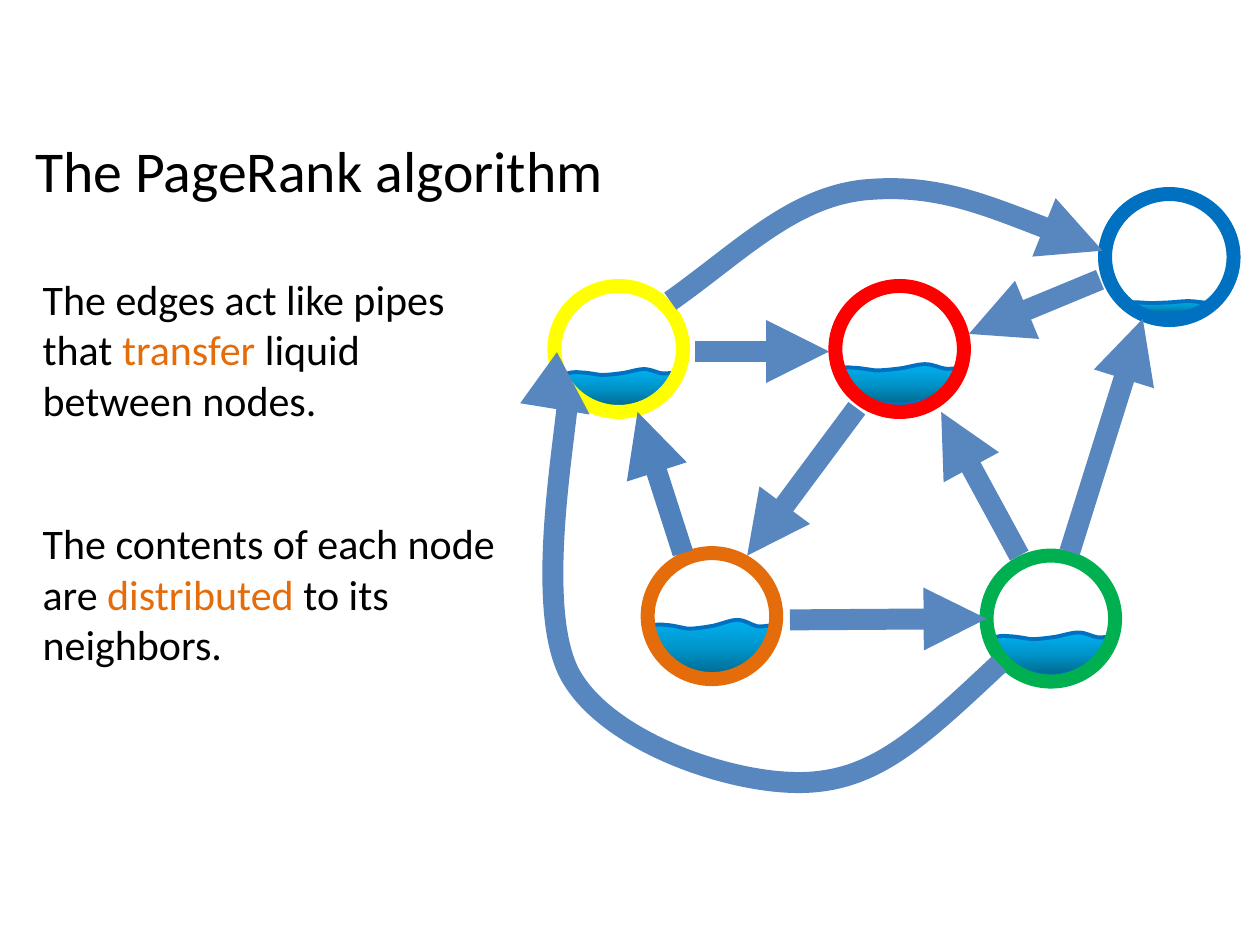
import copy

import pptx
import pptx.dml.color
import pptx.enum.shapes
import pptx.enum.text
import pptx.oxml
import pptx.oxml.ns
import pptx.util

Inches = pptx.util.Inches
qn = pptx.oxml.ns.qn

COLORS = {
    "text": "000000", "accent": "E46C0A", "pipe": "5887C0", "dark_pipe": "4F81BD",
    "blue": "0070C0", "red": "FF0000", "orange": "E46C0A", "yellow": "FFFF00", "green": "00B050",
    "deep": "00688E", "middle": "0094CA", "surface": "00B0F0",
}

WAVE_WIDTH, WAVE_HEIGHT = 102, 45
WAVE = [
    (0, 6), (3, 4), (8, 3), (14, 4), (19, 4), (26, 6), (32, 7), (38, 7), (44, 6), (50, 5),
    (57, 4), (65, 0), (71, 0), (78, 0), (82, 4), (87, 5), (92, 6), (100, 3), (102, 5),
    (103, 7), (99, 13), (97, 17), (95, 20), (92, 22), (89, 25), (86, 28), (82, 33), (78, 36),
    (74, 39), (68, 41), (64, 42), (59, 44), (55, 45), (50, 45), (44, 45), (37, 44), (32, 42),
    (28, 41), (25, 38), (21, 36), (18, 34), (17, 33), (14, 30), (11, 26), (6, 20), (4, 17),
]

NODES = [
    ("blue", 8.77, 1.54, (8.88, 2.39, 0.79, 0.1)),
    ("red", 6.63, 2.27, (6.63, 2.89, 1.02, 0.32)),
    ("orange", 5.14, 4.39, (5.14, 4.92, 1.02, 0.45)),
    ("yellow", 4.4, 2.27, (4.49, 2.93, 0.89, 0.3)),
    ("green", 7.83, 4.41, (7.88, 5.02, 0.97, 0.34)),
]

STRAIGHT_PIPES = [
    ((8.73, 2.22), (7.69, 2.65)),
    ((8.49, 4.38), (9.07, 2.53)),
    ((8.09, 4.41), (7.47, 3.27)),
    ((6.27, 4.92), (7.83, 4.91)),
    ((5.52, 2.79), (6.58, 2.79)),
    ((6.8, 3.24), (5.93, 4.41)),
]

CURVED_PIPES = [
    [(5.32, 2.39), (5.86, 2.01), (6.27, 1.58), (6.84, 1.51), (7.41, 1.45), (8.09, 1.72), (8.75, 1.99)],
    [(7.93, 5.27), (7.3, 5.86), (6.95, 6.19), (6.39, 6.21), (5.82, 6.23), (4.85, 5.9), (4.54, 5.38),
     (4.23, 4.87), (4.49, 3.48), (4.51, 3.13), (4.54, 2.78), (4.64, 3.27), (4.68, 3.29)],
]


class GraphSlide:
    font = "Calibri"
    ring_width = 8
    pipe_width = 12
    wave_width = 2.25

    def __init__(self, slide):
        self.slide = slide

    def color(self, name):
        return pptx.dml.color.RGBColor.from_string(COLORS[name])

    def stroke(self, shape, color, width, arrow=False):
        shape.line.color.rgb = self.color(color)
        shape.line.width = pptx.util.Pt(width)
        if arrow:
            tail = pptx.oxml.parse_xml(
                f'<a:tailEnd {pptx.oxml.ns.nsdecls("a")} type="triangle"/>')
            shape.line._get_or_add_ln().append(tail)

    def curve(self, points):
        start, *rest = [(Inches(x), Inches(y)) for x, y in points]
        builder = self.slide.shapes.build_freeform(*start)
        builder.add_line_segments(rest, close=False)
        shape = builder.convert_to_shape()
        shape.shadow.inherit = False
        outline = next(shape._element.iter(qn("a:path")))
        segments = outline.findall(qn("a:lnTo"))
        for index in range(0, len(segments), 3):
            bezier = outline.makeelement(qn("a:cubicBezTo"))
            outline.append(bezier)
            for segment in segments[index:index + 3]:
                bezier.append(segment[0])
                outline.remove(segment)
        return shape

    def water(self, left, top, width, height):
        shape = self.curve([
            (left + x * width / WAVE_WIDTH, top + y * height / WAVE_HEIGHT) for x, y in WAVE])
        shape.fill.gradient()
        shape.fill.gradient_angle = 90
        stop_list = next(shape._element.iter(qn("a:gsLst")))
        stop_list.append(copy.deepcopy(stop_list[0]))
        stops = zip(shape.fill.gradient_stops, (0, 0.5, 1), ("deep", "middle", "surface"))
        for stop, position, color in stops:
            stop.position = position
            stop.color.rgb = self.color(color)
        self.stroke(shape, "blue", self.wave_width)

    def ring(self, color, left, top):
        shape = self.slide.shapes.add_shape(
            pptx.enum.shapes.MSO_SHAPE.OVAL, Inches(left), Inches(top), Inches(1.02), Inches(1))
        shape.shadow.inherit = False
        shape.fill.background()
        self.stroke(shape, color, self.ring_width)

    def straight_pipe(self, start, end, color="pipe"):
        connector = self.slide.shapes.add_connector(
            pptx.enum.shapes.MSO_CONNECTOR.STRAIGHT, *map(Inches, start + end))
        self.stroke(connector, color, self.pipe_width, arrow=True)
        effects = pptx.oxml.parse_xml(f'<a:effectLst {pptx.oxml.ns.nsdecls("a")}/>')
        connector._element.spPr.append(effects)

    def curved_pipe(self, points):
        shape = self.curve(points)
        shape.fill.background()
        self.stroke(shape, "pipe", self.pipe_width, arrow=True)

    def text(self, box, size, runs, wrap=True):
        shape = self.slide.shapes.add_textbox(*map(Inches, box))
        frame = shape.text_frame
        frame.word_wrap = wrap
        frame.auto_size = pptx.enum.text.MSO_AUTO_SIZE.SHAPE_TO_FIT_TEXT
        paragraph = frame.paragraphs[0]
        for words, color in runs:
            run = paragraph.add_run()
            run.text = words
            run.font.name = self.font
            run.font.size = pptx.util.Pt(size)
            run.font.color.rgb = self.color(color)


def main():
    presentation = pptx.Presentation()
    presentation.slide_width = Inches(10)
    presentation.slide_height = Inches(7.5)
    graph = GraphSlide(presentation.slides.add_slide(presentation.slide_layouts[6]))

    for color, left, top, water in NODES:
        graph.water(*water)
    for color, left, top, water in NODES:
        graph.ring(color, left, top)
    for start, end in STRAIGHT_PIPES:
        graph.straight_pipe(start, end)
    for points in CURVED_PIPES:
        graph.curved_pipe(points)
    graph.straight_pipe((5.42, 4.39), (5.06, 3.27), "dark_pipe")

    graph.text((0.24, 4.06, 3.93, 1.31), 24, [
        ("The contents of each node are ", "text"),
        ("distributed", "accent"),
        (" to its neighbors.", "text"),
    ])
    graph.text((0.18, 1.02, 5.32, 0.66), 33, [("The PageRank algorithm", "text")], wrap=False)
    graph.text((0.24, 2.12, 3.93, 1.31), 24, [
        ("The edges act like pipes that ", "text"),
        ("transfer", "accent"),
        (" liquid between nodes.", "text"),
    ])
    presentation.save("out.pptx")


if __name__ == "__main__":
    main()
